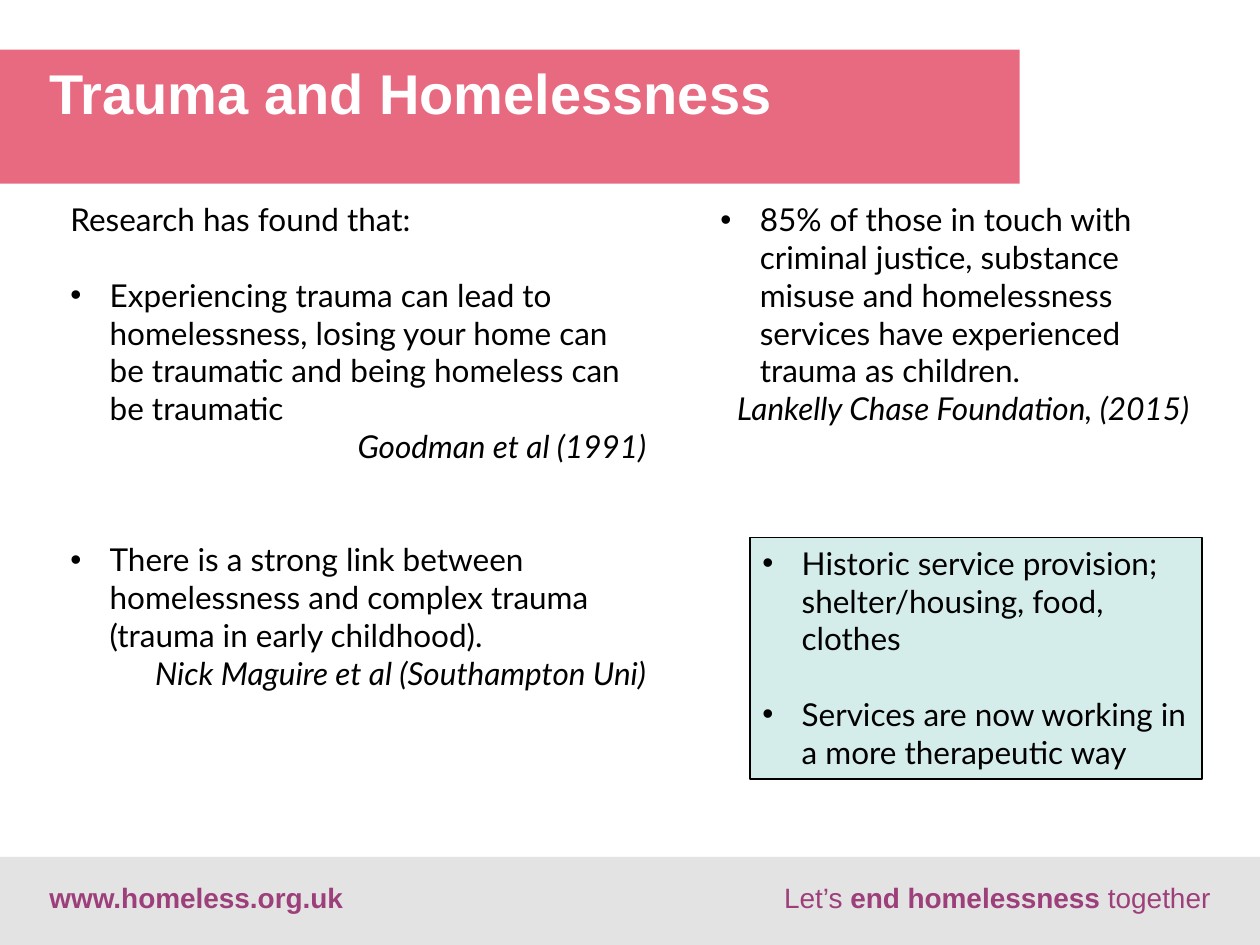
from lxml.etree import SubElement
from pptx import Presentation
from pptx.dml.color import RGBColor
from pptx.enum.shapes import MSO_SHAPE as Shape
from pptx.enum.text import MSO_ANCHOR as Anchor, PP_ALIGN as Align
from pptx.oxml.ns import qn
from pptx.util import Pt

COLOURS = {
    "band": "E5516C",
    "footer": "E3E3E3",
    "purple": "9D3F7B",
    "mint": "D4EDEB",
    "white": "FFFFFF",
    "black": "000000",
}
WIDTH, HEIGHT = 720, 540
LINE = 21.6  # height of one line of body text
INDENT = 22.5


def colour(name):
    return RGBColor.from_string(COLOURS[name])


class SlideBuilder:
    heading_font = "Arial"
    body_font = "Lato"
    body_size = 18

    def __init__(self, presentation):
        self.slide = presentation.slides.add_slide(presentation.slide_layouts[6])

    def rectangle(self, left, top, width, height, fill, line=None, alpha=None):
        shape = self.slide.shapes.add_shape(
            Shape.RECTANGLE, Pt(left), Pt(top), Pt(width), Pt(height))
        shape.shadow.inherit = False
        shape.fill.solid()
        shape.fill.fore_color.rgb = colour(fill)
        if alpha:
            rgb = shape.fill._xPr.find(".//" + qn("a:srgbClr"))
            SubElement(rgb, qn("a:alpha"), val=str(alpha * 1000))
        if line:
            shape.line.color.rgb = colour(line)
            shape.line.width = Pt(1)
        else:
            shape.line.fill.background()
        return shape

    def text_box(self, left, top, width, height):
        return self.slide.shapes.add_textbox(
            Pt(left), Pt(top), Pt(width), Pt(height))

    def frame(self, shape, margins=(7.2, 3.6, 7.2, 3.6), anchor=Anchor.TOP):
        frame = shape.text_frame
        frame.word_wrap = True
        frame.vertical_anchor = anchor
        (frame.margin_left, frame.margin_top,
         frame.margin_right, frame.margin_bottom) = map(Pt, margins)
        return frame

    def style(self, run, font, size, fill, bold=False, italic=False):
        run.font.name = font
        run.font.size = Pt(size)
        run.font.color.rgb = colour(fill)
        run.font.bold = bold
        run.font.italic = italic

    def heading(self, shape, parts, size, fill, margins,
                anchor=Anchor.TOP, align=Align.LEFT, spacing=None):
        """One line made of (text, bold) parts."""
        paragraph = self.frame(shape, margins, anchor).paragraphs[0]
        paragraph.alignment = align
        if spacing:
            paragraph.line_spacing = Pt(spacing)
        for text, bold in parts:
            run = paragraph.add_run()
            run.text = text
            self.style(run, self.heading_font, size, fill, bold)

    def bullet(self, paragraph):
        properties = paragraph._p.get_or_add_pPr()
        properties.set("marL", str(Pt(INDENT)))
        properties.set("indent", str(-Pt(INDENT)))
        SubElement(properties, qn("a:buFont"), typeface="Arial")
        SubElement(properties, qn("a:buChar"), char="•")

    def body(self, shape, items):
        """Items are (kind, text, blank lines before)."""
        frame = self.frame(shape)
        frame.text = "\n".join(text for _, text, _ in items)
        for paragraph, (kind, _, gap) in zip(frame.paragraphs, items):
            if kind == "bullet":
                self.bullet(paragraph)
            paragraph.alignment = Align.RIGHT if kind == "source" else Align.LEFT
            if gap:
                paragraph.space_before = Pt(gap * LINE)
            for run in paragraph.runs:
                self.style(run, self.body_font, self.body_size, "black",
                           italic=kind == "source")


def main():
    presentation = Presentation()
    presentation.slide_width, presentation.slide_height = Pt(WIDTH), Pt(HEIGHT)
    builder = SlideBuilder(presentation)

    # Title band
    band = builder.rectangle(0, 28.4, 582.6, 76.6, "band", alpha=85)
    builder.heading(band, [("Trauma and Homelessness", True)], 32, "white",
                    (28.3, 8.5, 8.5, 8.5), spacing=35)

    # Footer halves
    footers = [
        ([("www.homeless.org.uk", True)], Align.LEFT),
        ([("Let’s ", False), ("end homelessness", True), (" together", False)],
         Align.RIGHT),
    ]
    half = WIDTH / 2
    for index, (parts, align) in enumerate(footers):
        footer = builder.rectangle(index * half, 489.6, half, 50.4, "footer")
        builder.heading(footer, parts, 16, "purple", (28.3, 0, 28.3, 4),
                        Anchor.MIDDLE, align)

    # Research findings
    builder.body(builder.text_box(33.1, 110.9, 343.4, 312.5), [
        ("plain", "Research has found that:", 0),
        ("bullet", "Experiencing trauma can lead to homelessness, losing your "
                   "home can be traumatic and being homeless can be traumatic", 1),
        ("source", "Goodman et al (1991)", 0),
        ("bullet", "There is a strong link between homelessness and complex "
                   "trauma (trauma in early childhood).", 2),
        ("source", "Nick Maguire et al (Southampton Uni)", 0),
    ])
    builder.body(builder.text_box(404.6, 110.9, 282.2, 160), [
        ("bullet", "85% of those in touch with criminal justice, substance misuse "
                   "and homelessness services have experienced trauma as children.", 0),
        ("source", "Lankelly Chase Foundation, (2015)", 0),
    ])

    # Service provision box
    provision = builder.rectangle(428.5, 307.2, 258.5, 138, "mint", line="black")
    builder.body(provision, [
        ("bullet", "Historic service provision; shelter/housing, food, clothes", 0),
        ("bullet", "Services are now working in a more therapeutic way", 1),
    ])

    presentation.save("out.pptx")


if __name__ == "__main__":
    main()
